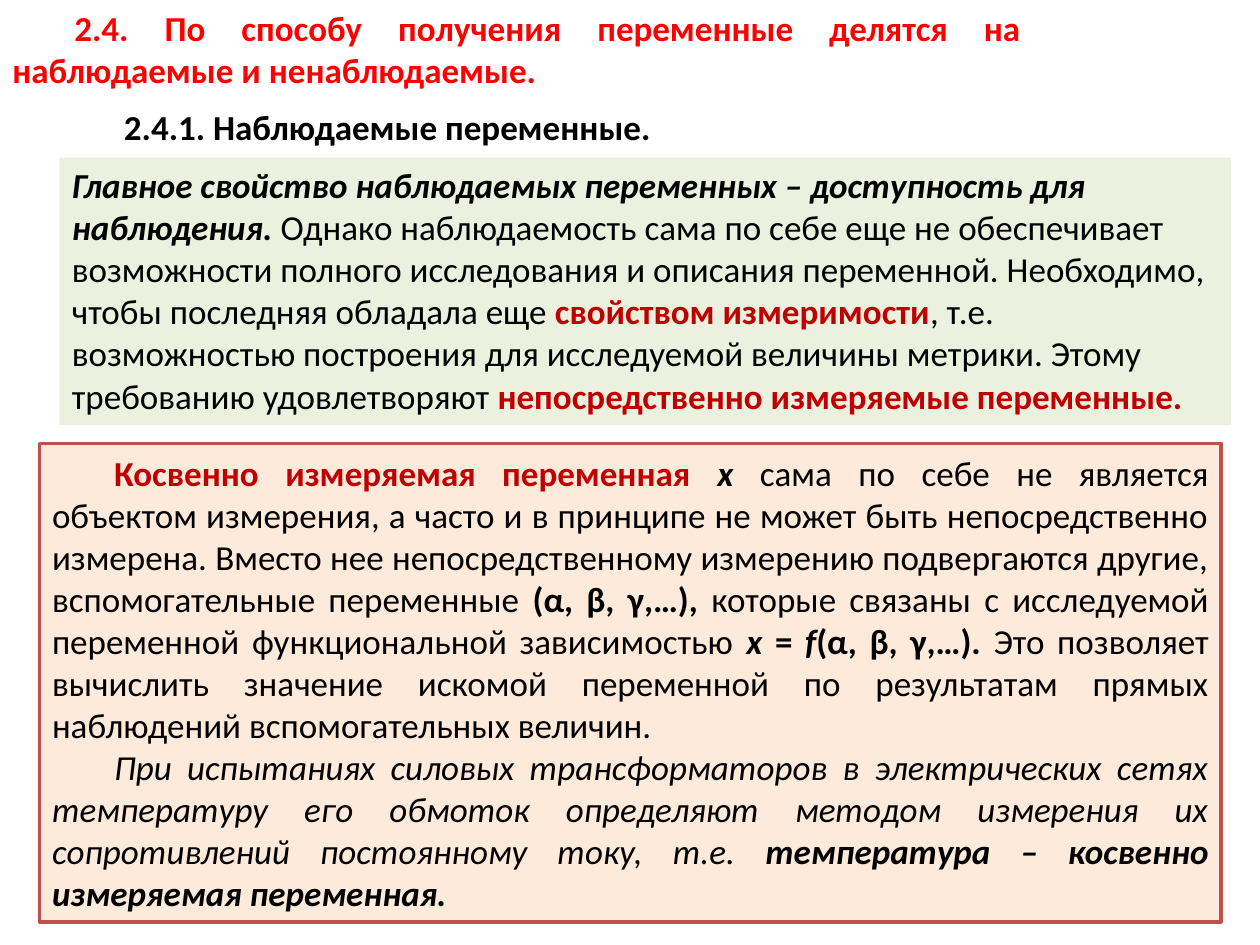
from pptx import Presentation
from pptx.dml.color import RGBColor
from pptx.enum.shapes import MSO_SHAPE
from pptx.enum.text import MSO_ANCHOR, MSO_AUTO_SIZE, PP_ALIGN
from pptx.util import Cm, Pt

COLORS = {
    "heading": "FF0000",
    "text": "000000",
    "accent": "C00000",
    "green": "EBF1DE",
    "peach": "FDEADA",
    "border": "C0504D",
}
FONT = "Calibri"
SIZE = Pt(20)
INDENT = Cm(1.25)

# Each part is (text, style, colour); style letters: b = bold, i = italic
HEADING = [[("2.4. По способу получения переменные делятся на наблюдаемые и "
             "ненаблюдаемые.", "b", "heading")]]
SUBHEADING = [[("2.4.1. Наблюдаемые переменные.", "b", "text")]]
OBSERVABLE = [[
    ("Главное свойство наблюдаемых переменных – доступность для наблюдения.",
     "bi", "text"),
    (" Однако наблюдаемость сама по себе еще не обеспечивает возможности "
     "полного исследования и описания переменной. Необходимо, чтобы последняя "
     "обладала еще ", "", "text"),
    ("свойством измеримости", "b", "accent"),
    (", т.е. возможностью построения для исследуемой величины метрики. Этому "
     "требованию удовлетворяют ", "", "text"),
    ("непосредственно измеряемые переменные.", "b", "accent"),
]]
INDIRECT = [
    [
        ("Косвенно измеряемая переменная ", "b", "accent"),
        ("x", "bi", "text"),
        (" сама по себе не является объектом измерения, а часто и в принципе "
         "не может быть непосредственно измерена. Вместо нее "
         "непосредственному измерению подвергаются другие, вспомогательные "
         "переменные ", "", "text"),
        ("(α, β, γ,…), ", "b", "text"),
        ("которые связаны с исследуемой переменной функциональной "
         "зависимостью ", "", "text"),
        ("x ", "bi", "text"),
        ("= ", "b", "text"),
        ("f", "bi", "text"),
        ("(α, β, γ,…). ", "b", "text"),
        ("Это позволяет вычислить значение искомой переменной по результатам "
         "прямых наблюдений вспомогательных величин. ", "", "text"),
    ],
    [
        ("При испытаниях силовых трансформаторов в электрических сетях "
         "температуру его обмоток определяют методом измерения их "
         "сопротивлений постоянному току, т.е. ", "i", "text"),
        ("температура – косвенно измеряемая переменная.", "bi", "text"),
    ],
]


def rgb(name):
    return RGBColor.from_string(COLORS[name])


def write_text(frame, paragraphs, justified=True, wrap=True,
               anchor=MSO_ANCHOR.MIDDLE):
    frame.word_wrap = wrap
    frame.auto_size = MSO_AUTO_SIZE.SHAPE_TO_FIT_TEXT
    frame.vertical_anchor = anchor
    for number, parts in enumerate(paragraphs):
        paragraph = frame.add_paragraph() if number else frame.paragraphs[0]
        paragraph.alignment = PP_ALIGN.JUSTIFY if justified else PP_ALIGN.LEFT
        if justified:
            # First-line indent
            properties = paragraph._p.get_or_add_pPr()
            properties.set("marL", "0")
            properties.set("indent", str(int(INDENT)))
        for text, style, color in parts:
            run = paragraph.add_run()
            run.text = text
            run.font.name = FONT
            run.font.size = SIZE
            run.font.bold = "b" in style
            run.font.italic = "i" in style
            run.font.color.rgb = rgb(color)


def add_heading(slide, box, paragraphs, wrap=True):
    heading = slide.shapes.add_textbox(*box)
    write_text(heading.text_frame, paragraphs, wrap=wrap)


def add_panel(slide, box, paragraphs, fill, border=None, **layout):
    panel = slide.shapes.add_shape(MSO_SHAPE.RECTANGLE, *box)
    panel.shadow.inherit = False
    panel.fill.solid()
    panel.fill.fore_color.rgb = rgb(fill)
    if border:
        panel.line.color.rgb = rgb(border)
        panel.line.width = Pt(2)
    else:
        panel.line.fill.background()
    write_text(panel.text_frame, paragraphs, **layout)


def main():
    presentation = Presentation()
    presentation.slide_width, presentation.slide_height = Cm(25.4), Cm(19.05)
    slide = presentation.slides.add_slide(presentation.slide_layouts[6])

    # Section and subsection headings
    add_heading(slide, (Cm(0), Cm(0), Cm(20.83), Cm(1.97)), HEADING)
    add_heading(slide, (Cm(1), Cm(1.99), Cm(12.5), Cm(1.11)), SUBHEADING,
                wrap=False)

    # Observable variables
    add_panel(slide, (Cm(1.2), Cm(3.18), Cm(23.62), Cm(5.39)), OBSERVABLE,
              "green", justified=False, anchor=MSO_ANCHOR.TOP)

    # Indirectly measured variables
    add_panel(slide, (Cm(0.8), Cm(8.94), Cm(23.82), Cm(9.65)), INDIRECT,
              "peach", border="border")

    presentation.save("out.pptx")


if __name__ == "__main__":
    main()
